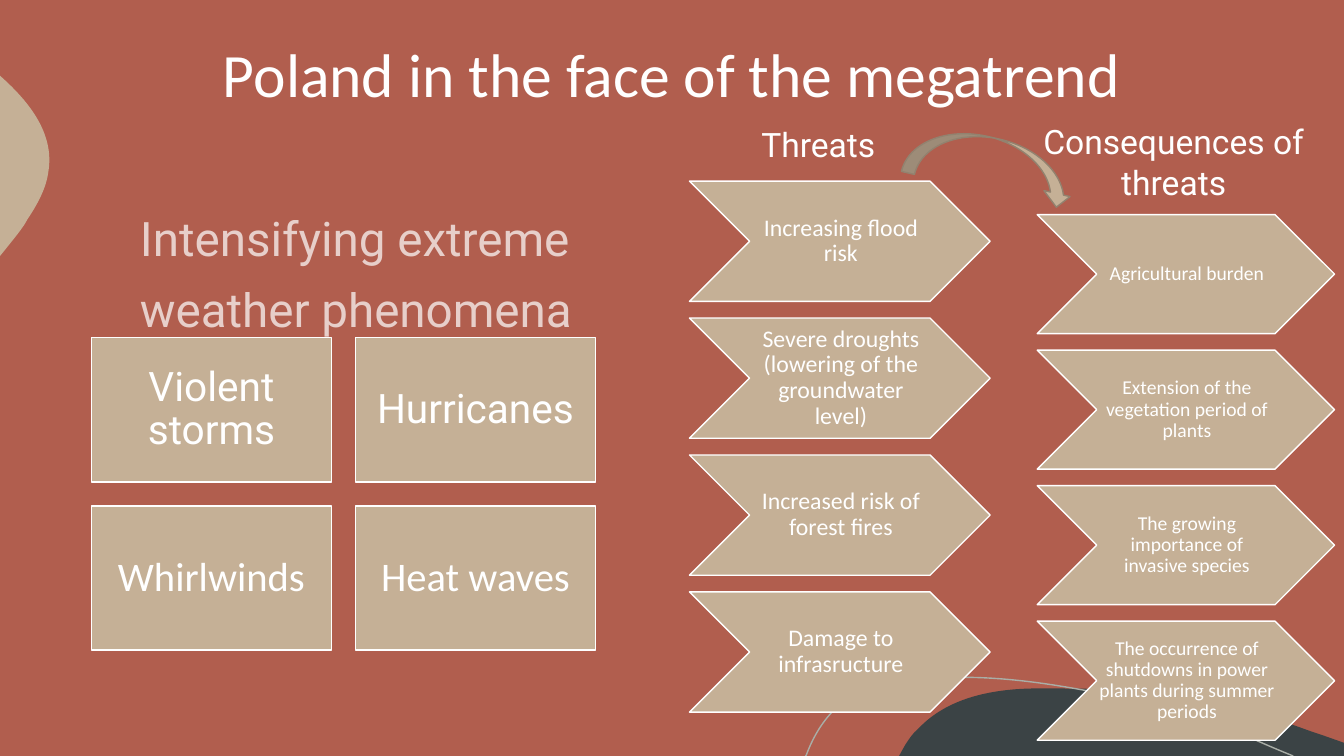
import lxml.etree
import pptx
import pptx.dml.color
import pptx.enum.shapes
import pptx.enum.text
import pptx.oxml
import pptx.oxml.ns
import pptx.util

Pt = pptx.util.Pt
RGBColor = pptx.dml.color.RGBColor
MSO_SHAPE = pptx.enum.shapes.MSO_SHAPE
MSO_ANCHOR = pptx.enum.text.MSO_ANCHOR
PP_ALIGN = pptx.enum.text.PP_ALIGN
qn = pptx.oxml.ns.qn

RED = RGBColor(0xB1, 0x5E, 0x4E)
SAND = RGBColor(0xC5, 0xB0, 0x96)
DARK_SAND = RGBColor(0x92, 0x82, 0x6F)
SLATE = RGBColor(0x3B, 0x43, 0x45)
GREY = RGBColor(0xA9, 0xAE, 0xA7)
WHITE = RGBColor(0xFF, 0xFF, 0xFF)

# Outlines in points: a pair is a line's end, six numbers are a Bézier curve.
SLATE_HILL = [
    (758.9, 491.8), (812.2, 491.8, 866.9, 496.8, 916.6, 515.5),
    (925.9, 518.4, 934.6, 522, 943.9, 524.9), (960, 530.6), (960, 540),
    (642.2, 540), (646.6, 532.1), (649.4, 527.8, 652.3, 523.4, 655.9, 520.6),
    (676.1, 499, 707, 492.5, 736.6, 491.8),
    (743.8, 491.8, 751, 491.8, 758.9, 491.8),
]
SAND_BLOB = [
    (0, 54), (0.7, 54.7), (21.6, 73.4, 38.9, 95.8, 34.6, 122.4),
    (33.1, 134.6, 26.6, 146.2, 19.4, 157),
    (17.3, 161.3, 12.2, 167.8, 5.8, 175.7), (0, 182.9),
]
GREY_ARC = [
    (575.3, 540), (576, 539.3), (580.3, 527.8, 586.1, 517.7, 593.3, 509.8),
    (612, 490.3, 640.1, 484.6, 666.7, 483.8), (687.6, 483.8),
    (738.4, 483.8, 792, 496.1, 831.6, 505.4),
    (870.5, 514.8, 882.7, 523.4, 923.8, 540),
]

PHENOMENA = [("Violent storms", "Roboto"), ("Hurricanes", "Roboto"),
             ("Whirlwinds", "Calibri"), ("Heat waves", "Calibri")]
THREATS = [
    "Increasing flood risk",
    "Severe droughts (lowering of the groundwater level)",
    "Increased risk of forest fires",
    "Damage to infrasructure",
]
CONSEQUENCES = [
    "Agricultural burden",
    "Extension of the vegetation period of plants",
    "The growing importance of invasive species",
    "The occurrence of shutdowns in power plants during summer periods",
]


def add_outline(slide, outline, width, fill=None, line=None):
    """Draw an outline; width is that of the curve without its control points."""
    start, *others = [(Pt(x), Pt(y)) for segment in outline
                      for x, y in zip(segment[::2], segment[1::2])]
    builder = slide.shapes.build_freeform(*start)
    builder.add_line_segments(others, close=fill is not None)
    shape = builder.convert_to_shape()
    contour = shape._element.find(".//" + qn("a:path"))
    bend(contour, outline)
    shape.width = Pt(width)
    contour.set("w", str(Pt(width)))
    paint(shape, fill, line)


def bend(contour, outline):
    """Join each three line ends that belong to one curve into a Bézier segment."""
    ends = iter(contour.findall(qn("a:lnTo")))
    for segment in outline[1:]:
        first = next(ends)
        if len(segment) == 6:
            curve = lxml.etree.Element(qn("a:cubicBezTo"))
            first.addprevious(curve)
            for end in (first, next(ends), next(ends)):
                curve.append(end[0])
                contour.remove(end)


def paint(shape, fill, line):
    shape.shadow.inherit = False
    if fill is None:
        shape.fill.background()
    else:
        shape.fill.solid()
        shape.fill.fore_color.rgb = fill
    if line is None:
        shape.line.fill.background()
    else:
        shape.line.color.rgb = line
        shape.line.width = Pt(1)


def write(shape, text, size, font, align=PP_ALIGN.CENTER, anchor=MSO_ANCHOR.MIDDLE,
          spacing=None, margins=(7.2, 3.6, 7.2, 3.6)):
    frame = shape.text_frame
    frame.word_wrap = True
    frame.vertical_anchor = anchor
    (frame.margin_left, frame.margin_top,
     frame.margin_right, frame.margin_bottom) = map(Pt, margins)
    paragraph = frame.paragraphs[0]
    paragraph.text = text
    paragraph.alignment = align
    paragraph.line_spacing = spacing
    paragraph.font.size = Pt(size)
    paragraph.font.name = font
    paragraph.font.color.rgb = WHITE
    return paragraph


def add_label(slide, box, text, size, font, **layout):
    label = slide.shapes.add_textbox(*map(Pt, box))
    return write(label, text, size, font, **layout)


def add_card(slide, kind, box, text, size, font, margins):
    card = slide.shapes.add_shape(kind, *map(Pt, box))
    paint(card, SAND, WHITE)
    write(card, text, size, font, spacing=0.9, margins=margins)


def add_chevrons(slide, texts, left, top, width, height, pitch, size):
    for row, text in enumerate(texts):
        add_card(slide, MSO_SHAPE.CHEVRON, (left, top + row * pitch, width, height),
                 text, size, "Calibri", (1.6, 0.7, 0, 0.7))


def set_opacity(paragraph, percent):
    color = paragraph.font.fill._xPr.find(".//" + qn("a:srgbClr"))
    alpha = pptx.oxml.parse_xml(
        f'<a:alpha {pptx.oxml.ns.nsdecls("a")} val="{percent * 1000}"/>')
    color.append(alpha)


def main():
    deck = pptx.Presentation()
    deck.slide_width, deck.slide_height = Pt(960), Pt(540)
    slide = deck.slides.add_slide(deck.slide_layouts[6])
    slide.background.fill.solid()
    slide.background.fill.fore_color.rgb = RED

    add_outline(slide, SLATE_HILL, 317.8, fill=SLATE)
    add_outline(slide, SAND_BLOB, 35.3, fill=SAND)
    add_outline(slide, GREY_ARC, 348.5, line=GREY)

    add_label(slide, (60, -4.3, 840, 120), "Poland in the face of the megatrend",
              44, "Calibri", spacing=0.9)

    for index, (phenomenon, font) in enumerate(PHENOMENA):
        row, column = divmod(index, 2)
        box = (65.4 + column * 188.6, 241.3 + row * 120.2, 171.4, 102.9)
        add_card(slide, MSO_SHAPE.RECTANGLE, box, phenomenon, 29, font, [8.6] * 4)
    heading = add_label(slide, (92.9, 135.4, 393.8, 57.6),
                        "Intensifying extreme weather phenomena", 34, "Roboto",
                        align=PP_ALIGN.LEFT, anchor=MSO_ANCHOR.TOP, spacing=1.25)
    heading.space_before = Pt(10)
    set_opacity(heading, 70)

    add_chevrons(slide, THREATS, 492.5, 129.4, 214.8, 85.9, 97.8, 17)
    add_chevrons(slide, CONSEQUENCES, 740.9, 153.3, 212.4, 85, 96.8, 14)
    add_label(slide, (536.7, 85, 158.4, 36), "Threats", 24, "Roboto",
              align=PP_ALIGN.LEFT, anchor=MSO_ANCHOR.TOP)
    add_label(slide, (733.2, 83, 210.2, 65.5), "Consequences of threats", 24, "Roboto",
              anchor=MSO_ANCHOR.TOP)

    arrow = slide.shapes.add_shape(MSO_SHAPE.CURVED_DOWN_ARROW,
                                   Pt(646.6), Pt(98.6), Pt(123.1), Pt(38.2))
    arrow.rotation = 13
    paint(arrow, SAND, DARK_SAND)

    deck.save("out.pptx")


if __name__ == "__main__":
    main()
